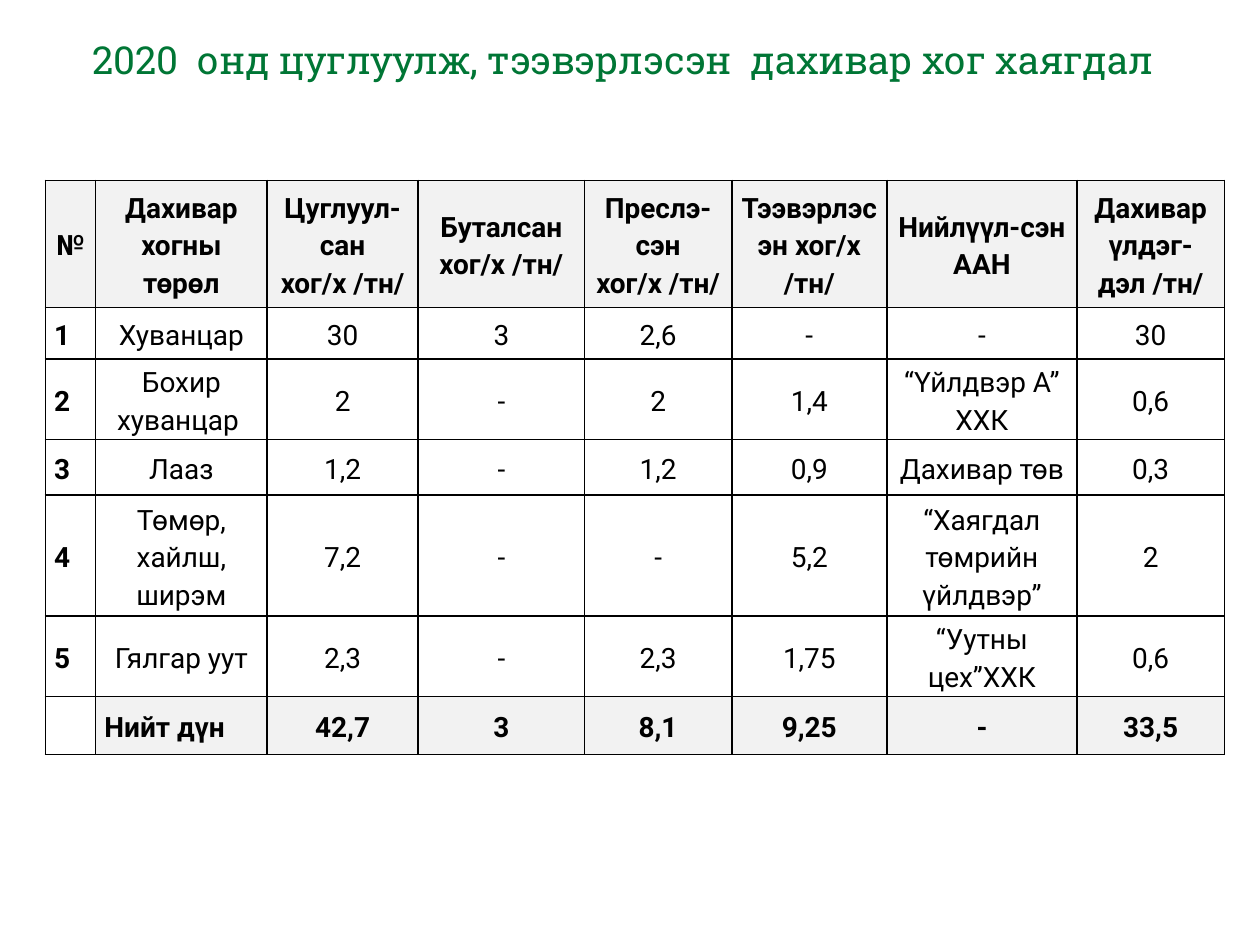
from lxml import etree
from pptx import Presentation
from pptx.dml.color import RGBColor
from pptx.enum import text
from pptx.oxml import ns
from pptx.util import Pt

COLORS = {"title": "007635", "ink": "000000", "band": "F2F2F2", "plain": "FFFFFF"}

TITLE = "2020  онд цуглуулж, тээвэрлэсэн  дахивар хог хаягдал"
HEADER = ["№", "Дахивар хогны төрөл", "Цуглуул-сан хог/х /тн/", "Буталсан хог/х /тн/",
          "Преслэ-сэн хог/х /тн/", "Тээвэрлэсэн хог/х /тн/", "Нийлүүл-сэн ААН",
          "Дахивар үлдэг-дэл /тн/"]
WASTE = [
    ["1", "Хуванцар", "30", "3", "2,6", "-", "-", "30"],
    ["2", "Бохир хуванцар ", "2", "-", "2", "1,4", "“Үйлдвэр А”\nХХК", "0,6"],
    ["3", "Лааз", "1,2", "-", "1,2", "0,9", "Дахивар төв", "0,3"],
    ["4", "Төмөр, хайлш, ширэм", "7,2", "-", "-", "5,2", "“Хаягдал төмрийн үйлдвэр”", "2"],
    ["5", "Гялгар уут", "2,3", "-", "2,3", "1,75", "“Уутны цех”ХХК", "0,6"],
]
TOTAL = ["", "Нийт дүн", "42,7", "3", "8,1", "9,25", "-", "33,5"]

COLUMN_WIDTHS = [28.8, 97.9, 86.4, 95, 84.2, 88.6, 108.7, 84.2]
ROW_HEIGHTS = [72.7, 29.5, 46.1, 31.7, 69.1, 46.1, 33.1]
TABLE_LEFT, TABLE_TOP = 25.9, 103


def rgb(name):
    return RGBColor.from_string(COLORS[name])


def add_run(paragraph, words, font, size, color, bold=False):
    run = paragraph.add_run()
    run.text = words
    run.font.name, run.font.size, run.font.bold = font, Pt(size), bold
    run.font.color.rgb = rgb(color)


def add_borders(cell):
    properties = cell._tc.get_or_add_tcPr()
    for position, side in enumerate(("lnL", "lnR", "lnT", "lnB")):
        line = etree.Element(ns.qn(f"a:{side}"), w=str(Pt(1)))
        fill = etree.SubElement(line, ns.qn("a:solidFill"))
        etree.SubElement(fill, ns.qn("a:srgbClr"), val=COLORS["ink"])
        properties.insert(position, line)


def fill_cell(cell, words, band, bold, centered):
    cell.fill.solid()
    cell.fill.fore_color.rgb = rgb("band" if band else "plain")
    cell.margin_left = cell.margin_right = Pt(5)
    cell.margin_top = cell.margin_bottom = 0
    cell.vertical_anchor = text.MSO_ANCHOR.MIDDLE
    add_borders(cell)
    if not words:
        return
    frame = cell.text_frame
    for number, line in enumerate(words.split("\n")):
        paragraph = frame.add_paragraph() if number else frame.paragraphs[0]
        paragraph.alignment = text.PP_ALIGN.CENTER if centered else text.PP_ALIGN.LEFT
        paragraph.line_spacing = 1.15
        add_run(paragraph, line, "Roboto", 16, "ink", bold)


def add_waste_table(slide):
    rows = [HEADER, *WASTE, TOTAL]
    table = slide.shapes.add_table(
        len(rows), len(HEADER), Pt(TABLE_LEFT), Pt(TABLE_TOP),
        Pt(sum(COLUMN_WIDTHS)), Pt(sum(ROW_HEIGHTS))).table
    for column, width in zip(table.columns, COLUMN_WIDTHS):
        column.width = Pt(width)
    for row, height in zip(table.rows, ROW_HEIGHTS):
        row.height = Pt(height)
    for r, row in enumerate(rows):
        is_header, is_total = row is HEADER, row is TOTAL
        for c, words in enumerate(row):
            fill_cell(table.cell(r, c), words,
                      band=is_header or (is_total and c > 0),
                      bold=is_header or is_total or c == 0,
                      centered=is_header or c > (1 if is_total else 0))


def add_title(slide):
    frame = slide.shapes.add_textbox(Pt(6.5), Pt(17.3), Pt(699), Pt(33.8)).text_frame
    frame.word_wrap = True
    frame.auto_size = text.MSO_AUTO_SIZE.SHAPE_TO_FIT_TEXT
    frame.paragraphs[0].alignment = text.PP_ALIGN.CENTER
    add_run(frame.paragraphs[0], TITLE, "Roboto Slab", 22, "title")


def main():
    deck = Presentation()
    deck.slide_width, deck.slide_height = Pt(720), Pt(540)
    slide = deck.slides.add_slide(deck.slide_layouts[6])
    add_waste_table(slide)
    add_title(slide)
    deck.save("out.pptx")


if __name__ == "__main__":
    main()
